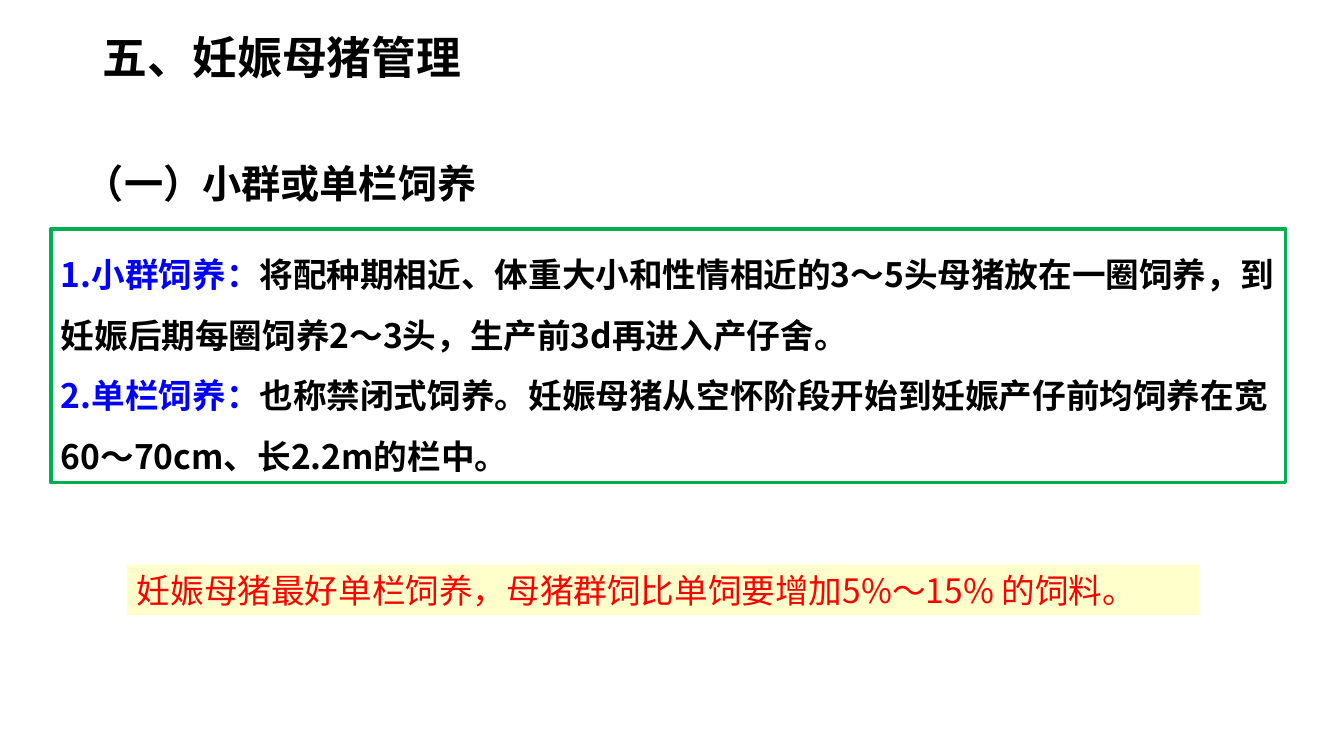
"""Build the slide on housing pregnant sows."""
from dataclasses import dataclass

from lxml import etree
from pptx import Presentation
from pptx.dml.color import RGBColor
from pptx.enum.lang import MSO_LANGUAGE_ID
from pptx.enum.shapes import MSO_SHAPE
from pptx.enum.text import MSO_ANCHOR, MSO_AUTO_SIZE, PP_ALIGN
from pptx.oxml.ns import qn
from pptx.slide import Slide
from pptx.util import Emu, Pt

RECTANGLE = MSO_SHAPE.RECTANGLE
TOP = MSO_ANCHOR.TOP
LEFT = PP_ALIGN.LEFT
GROW = MSO_AUTO_SIZE.SHAPE_TO_FIT_TEXT
CHINESE = MSO_LANGUAGE_ID.SIMPLIFIED_CHINESE

PX_PER_INCH = 100.8
FONT = "Noto Sans CJK SC"
BLACK, BLUE, RED = "000000", "0000FF", "FF0000"
WHITE, GREEN, CREAM = "FFFFFF", "00B050", "FFFFCC"


@dataclass(frozen=True)
class Span:
    text: str
    color: str = BLACK


@dataclass(frozen=True)
class Block:
    left: int
    top: int
    width: int
    height: int
    paragraphs: list[list[Span]]
    size: int
    bold: bool = True
    spacing: float = 1.0
    wrap: bool = True
    fill: str | None = None
    line: str | None = None


BLOCKS = [
    Block(93, 25, 439, 65, [[Span("五、妊娠母猪管理")]], 32),
    Block(51, 229, 1235, 254, [
        [Span("1.小群饲养：", BLUE),
         Span("将配种期相近、体重大小和性情相近的3～5头母猪放在一圈饲养，"
              "到妊娠后期每圈饲养2～3头，生产前3d再进入产仔舍。")],
        [Span("2.单栏饲养：", BLUE),
         Span("也称禁闭式饲养。妊娠母猪从空怀阶段开始到妊娠产仔前均饲养在"
              "宽60～70cm、长2.2m的栏中。")],
    ], 24, spacing=1.5, fill=WHITE, line=GREEN),
    Block(127, 565, 1072, 50, [
        [Span("妊娠母猪最好单栏饲养，母猪群饲比单饲要增加5%～15% 的饲料。", RED)],
    ], 24, bold=False, fill=CREAM),
    Block(75, 154, 416, 57, [[Span("（一）小群或单栏饲养")]], 28, wrap=False),
]


def px(value: int) -> Emu:
    """Turn pixels into EMU."""
    return Emu(round(value * 914400 / PX_PER_INCH))


def rgb(color: str) -> RGBColor:
    """Turn a hex string into a colour."""
    return RGBColor.from_string(color)


def add_block(slide: Slide, block: Block) -> None:
    """Draw one text box or filled rectangle with its text."""
    place = [px(v) for v in (block.left, block.top, block.width, block.height)]
    if block.fill:
        sp = slide.shapes.add_shape(RECTANGLE, *place)
        sp.shadow.inherit = False
        sp.fill.solid()
        sp.fill.fore_color.rgb = rgb(block.fill)
        if block.line:
            sp.line.color.rgb = rgb(block.line)
            sp.line.width = Pt(2.25)
        else:
            sp.line.fill.background()
    else:
        sp = slide.shapes.add_textbox(*place)
    tf = sp.text_frame
    tf.word_wrap = block.wrap
    tf.auto_size = GROW
    tf.vertical_anchor = TOP
    for i, spans in enumerate(block.paragraphs):
        p = tf.add_paragraph() if i else tf.paragraphs[0]
        p.alignment = LEFT
        p.line_spacing = block.spacing
        for span in spans:
            r = p.add_run()
            r.text = span.text
            r.font.size = Pt(block.size)
            r.font.bold = block.bold
            r.font.name = FONT
            r.font.language_id = CHINESE
            r.font.color.rgb = rgb(span.color)
            etree.SubElement(r.font._element, qn("a:ea"), typeface=FONT)


def main() -> None:
    """Build and save the presentation."""
    prs = Presentation()
    prs.slide_width, prs.slide_height = px(1344), px(756)
    slide = prs.slides.add_slide(prs.slide_layouts[6])
    for block in BLOCKS:
        add_block(slide, block)
    prs.save("out.pptx")


if __name__ == "__main__":
    main()
